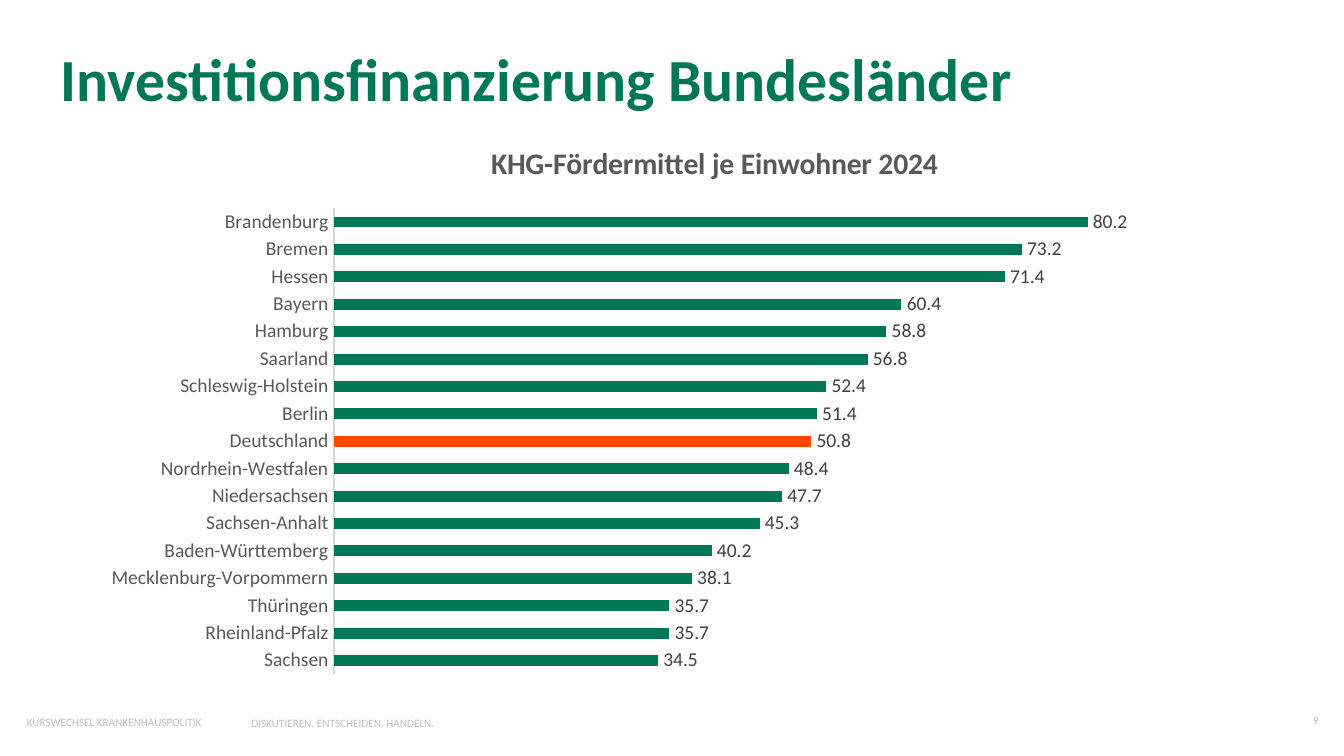
from lxml import etree
from pptx import Presentation
from pptx.chart.data import CategoryChartData
from pptx.dml.color import RGBColor
from pptx.enum.chart import XL_CHART_TYPE as ChartType
from pptx.enum.chart import XL_LABEL_POSITION as LabelPosition
from pptx.enum.chart import XL_TICK_MARK as TickMark
from pptx.enum.text import MSO_ANCHOR as Anchor
from pptx.enum.text import PP_ALIGN as Align
from pptx.oxml.ns import qn
from pptx.util import Inches, Pt

COLORS = {
    "green": "007858",
    "orange": "FE4A00",
    "title": "595959",
    "label": "404040",
    "axis": "D9D9D9",
    "footer": "BFBFBF",
    "black": "000000",
}
FONT = "Calibri"
HIGHLIGHT = "Deutschland"
FUNDING = {
    "Sachsen": 34.5,
    "Rheinland-Pfalz": 35.7,
    "Thüringen": 35.7,
    "Mecklenburg-Vorpommern": 38.1,
    "Baden-Württemberg": 40.2,
    "Sachsen-Anhalt": 45.3,
    "Niedersachsen": 47.7,
    "Nordrhein-Westfalen": 48.4,
    "Deutschland": 50.8,
    "Berlin": 51.4,
    "Schleswig-Holstein": 52.4,
    "Saarland": 56.8,
    "Hamburg": 58.8,
    "Bayern": 60.4,
    "Hessen": 71.4,
    "Bremen": 73.2,
    "Brandenburg": 80.2,
}


def color(name):
    return RGBColor.from_string(COLORS[name])


def set_font(font, size, color_name, name=FONT, bold=False):
    font.size = Pt(size)
    font.name = name
    font.bold = bold
    font.color.rgb = color(color_name)


def add_text(slide, text, left, top, width, height, *, size=6, color_name="footer",
             bold=False, align=Align.LEFT, anchor=Anchor.BOTTOM, line_spacing=None):
    box = slide.shapes.add_textbox(Inches(left), Inches(top), Inches(width), Inches(height))
    frame = box.text_frame
    frame.word_wrap = True
    frame.vertical_anchor = anchor
    frame.margin_left = frame.margin_top = frame.margin_right = frame.margin_bottom = 0
    paragraph = frame.paragraphs[0]
    paragraph.alignment = align
    paragraph.line_spacing = line_spacing
    run = paragraph.add_run()
    run.text = text
    set_font(run.font, size, color_name, bold=bold)


def set_layout(element, before, **settings):
    """Place a chart part by fractions of the chart, ahead of the named sibling."""
    for old in element.findall(qn("c:layout")):
        element.remove(old)
    layout = etree.Element(qn("c:layout"))
    manual = etree.SubElement(layout, qn("c:manualLayout"))
    for tag, value in settings.items():
        etree.SubElement(manual, qn(f"c:{tag}")).set("val", str(value))
    element.find(qn(before)).addprevious(layout)


def add_funding_chart(slide):
    data = CategoryChartData(number_format="0.0")
    data.categories = list(FUNDING)
    data.add_series("Series 1", list(FUNDING.values()))
    chart = slide.shapes.add_chart(
        ChartType.BAR_CLUSTERED, Inches(0.83), Inches(1.02), Inches(8.11), Inches(4.08), data
    ).chart
    set_font(chart.font, 10, "black", name="Montserrat")
    chart.has_legend = False

    # Chart title
    chart.has_title = True
    title_frame = chart.chart_title.text_frame
    title_frame.text = "KHG-Fördermittel je Einwohner 2024"
    set_font(title_frame.paragraphs[0].runs[0].font, 16, "title", bold=True)
    title = chart.chart_title._element
    set_layout(title, "c:overlay", xMode="edge", yMode="edge", x=0.34, y=0)

    # Axes
    category_axis = chart.category_axis
    category_axis.major_tick_mark = category_axis.minor_tick_mark = TickMark.NONE
    set_font(category_axis.tick_labels.font, 10.5, "title")
    category_axis.format.line.color.rgb = color("axis")
    category_axis.format.line.width = Pt(0.75)
    value_axis = chart.value_axis
    value_axis.visible = False
    value_axis.has_major_gridlines = False
    value_axis.minimum_scale, value_axis.maximum_scale = 0, 90

    # Bars, with the national average highlighted
    plot = chart.plots[0]
    plot.gap_width = 150
    plot.vary_by_categories = False
    series = plot.series[0]
    bar_colors = {series: "green", series.points[list(FUNDING).index(HIGHLIGHT)]: "orange"}
    for bar, name in bar_colors.items():
        bar.format.fill.solid()
        bar.format.fill.fore_color.rgb = color(name)

    # Value labels
    labels = series.data_labels
    labels.show_value = True
    labels.position = LabelPosition.OUTSIDE_END
    labels.number_format = "0.0"
    labels.number_format_is_linked = False
    set_font(labels.font, 10.5, "label")

    plot_area = chart._chartSpace.chart.plotArea
    set_layout(plot_area, "c:barChart", layoutTarget="inner", xMode="edge", yMode="edge",
               x=0.2, y=0.13, w=0.78, h=0.85)


def main():
    # Widescreen page, 16 to 9
    presentation = Presentation()
    presentation.slide_width = Inches(10)
    presentation.slide_height = Inches(10 * 9 / 16)
    slide = presentation.slides.add_slide(presentation.slide_layouts[6])

    # Footer
    add_text(slide, "KURSWECHSEL KRANKENHAUSPOLITIK", 0.2, 5.19, 1.39, 0.23)
    add_text(slide, "DISKUTIEREN. ENTSCHEIDEN. HANDELN.", 1.87, 5.19, 1.61, 0.24)
    add_text(slide, "9", 9.51, 5.3, 0.3, 0.11, align=Align.RIGHT, line_spacing=0.9)

    # Heading and chart
    add_text(slide, "Investitionsfinanzierung Bundesländer", 0.45, 0.37, 9.06, 0.63,
             size=32, color_name="green", bold=True, anchor=Anchor.TOP, line_spacing=0.9)
    add_funding_chart(slide)

    presentation.save("out.pptx")


if __name__ == "__main__":
    main()
